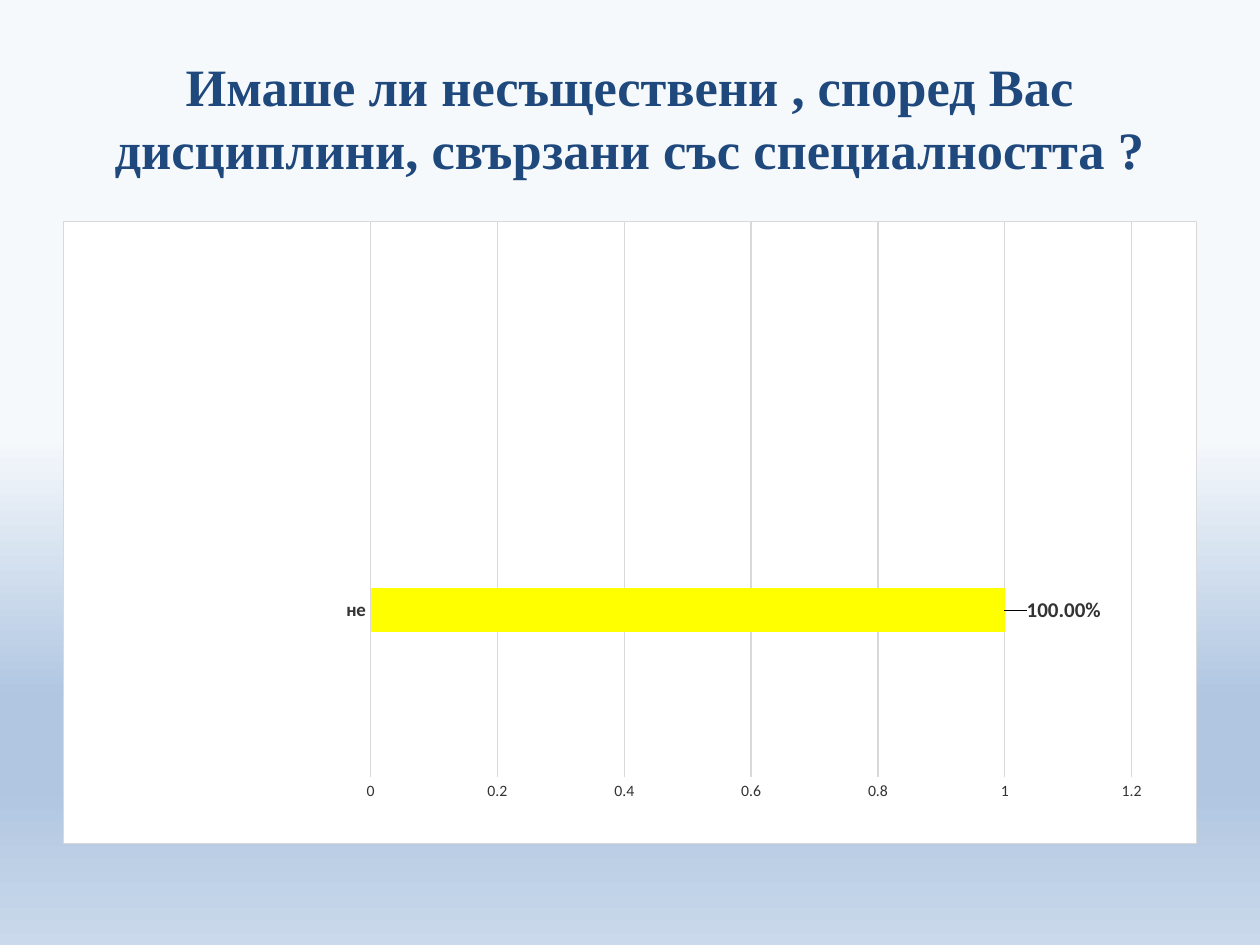
from lxml import etree
from pptx import Presentation
from pptx import util as u
from pptx.chart import data as chart_data
from pptx.dml.color import RGBColor
from pptx.enum import chart as kinds, text
from pptx.oxml import ns

NAVY = RGBColor(0x1F, 0x49, 0x7D)
DARK = RGBColor(0x33, 0x33, 0x33)
BLACK = RGBColor(0, 0, 0)
WHITE = RGBColor(0xFF, 0xFF, 0xFF)
GRID = RGBColor(0xD9, 0xD9, 0xD9)
YELLOW = RGBColor(0xFF, 0xFF, 0x00)
SKY = [(46, RGBColor(0xF6, 0xF9, 0xFC)), (74, RGBColor(0xB0, 0xC6, 0xE1)),
       (83, RGBColor(0xB0, 0xC6, 0xE1)), (100, RGBColor(0xCA, 0xD9, 0xEB))]


def set_font(font, *, name, size, color, bold=False):
    font.name, font.size, font.bold = name, u.Pt(size), bold
    font.color.rgb = color


def write(frame, words, *, align=text.PP_ALIGN.LEFT, **style):
    para = frame.paragraphs[0]
    para.alignment = align
    span = para.add_run()
    span.text = words
    set_font(span.font, **style)


def add_node(parent, tag, **attributes):
    return etree.SubElement(parent, ns.qn(tag), **attributes)


def manual_layout(**values):
    layout = etree.Element(ns.qn("c:layout"))
    manual = add_node(layout, "c:manualLayout")
    for tag, value in values.items():
        add_node(manual, f"c:{tag}", val=str(value))
    return layout


class SlideBuilder:
    heading_font = "Times New Roman"
    chart_font = "Calibri"

    def __init__(self, deck):
        self.page = deck.slides.add_slide(deck.slide_layouts[5])

    def background(self, stops):
        self.page.background.fill.gradient()
        gradient = next(self.page.element.iter(ns.qn("a:gradFill")))
        for child in list(gradient):
            gradient.remove(child)
        stop_list = add_node(gradient, "a:gsLst")
        for percent, color in stops:
            stop = add_node(stop_list, "a:gs", pos=str(percent * 1000))
            add_node(stop, "a:srgbClr", val=str(color))
        add_node(gradient, "a:lin", ang=str(90 * 60000), scaled="0")

    def title(self, words, left, top, width, height):
        box = self.page.shapes.title
        box.left, box.top, box.width, box.height = map(u.Pt, (left, top, width, height))
        box.text_frame.word_wrap = True
        box.text_frame.auto_size = text.MSO_AUTO_SIZE.NONE
        box.text_frame.vertical_anchor = text.MSO_ANCHOR.MIDDLE
        write(box.text_frame, words, align=text.PP_ALIGN.CENTER,
              name=self.heading_font, size=30, color=NAVY, bold=True)

    def axis(self, axis, size, bold):
        axis.major_tick_mark = axis.minor_tick_mark = kinds.XL_TICK_MARK.NONE
        axis.format.line.fill.background()
        set_font(axis.tick_labels.font, name=self.chart_font, size=size,
                 color=DARK, bold=bold)

    def bar_chart(self, categories, values, left, top, width, height):
        answers = chart_data.CategoryChartData(number_format="0.00%")
        answers.categories = categories
        answers.add_series("Series 1", values)
        chart = self.page.shapes.add_chart(
            kinds.XL_CHART_TYPE.BAR_CLUSTERED,
            *map(u.Pt, (left, top, width, height)), answers).chart
        chart.has_legend = chart.has_title = False
        set_font(chart.font, name=self.chart_font, size=10, color=BLACK)

        # Axes and gridlines
        self.axis(chart.category_axis, 10.8, True)
        chart.category_axis.has_major_gridlines = False
        scale = chart.value_axis
        self.axis(scale, 9, False)
        scale.minimum_scale, scale.maximum_scale, scale.major_unit = 0, 1.2, 0.2
        scale.tick_labels.number_format = "General"
        scale.tick_labels.number_format_is_linked = False
        scale.has_major_gridlines = True
        scale.major_gridlines.format.line.color.rgb = GRID
        scale.major_gridlines.format.line.width = u.Pt(0.75)

        # Bars and labels
        plot = chart.plots[0]
        plot.vary_by_categories = False
        plot.gap_width = 150
        series = plot.series[0]
        series.format.fill.solid()
        series.format.fill.fore_color.rgb = YELLOW
        labels = series.data_labels
        labels.show_value = True
        labels.number_format, labels.number_format_is_linked = "0.00%", False
        labels.position = kinds.XL_LABEL_POSITION.OUTSIDE_END
        label_style = dict(name=self.chart_font, size=12, color=DARK, bold=True)
        set_font(labels.font, **label_style)
        for index, value in enumerate(values):
            if value is not None:
                label = series.points[index].data_label
                set_font(label.font, **label_style)
                label.position = kinds.XL_LABEL_POSITION.OUTSIDE_END
        # Shift the labels a little away from the bar ends
        space = chart.element
        for node in space.iter(ns.qn("c:dLbl")):
            node.find(ns.qn("c:idx")).addnext(manual_layout(x=0.015, y=0))

        # Plot position, chart fill and border
        area = next(space.iter(ns.qn("c:plotArea")))
        for old in area.findall(ns.qn("c:layout")):
            area.remove(old)
        area.insert(0, manual_layout(layoutTarget="inner", xMode="edge", yMode="edge",
                                     x=0.271, y=0, w=0.672, h=0.893))
        look = etree.Element(ns.qn("c:spPr"))
        add_node(add_node(look, "a:solidFill"), "a:srgbClr", val=str(WHITE))
        border = add_node(look, "a:ln", w=str(u.Pt(0.75)))
        add_node(add_node(border, "a:solidFill"), "a:srgbClr", val=str(GRID))
        space.find(ns.qn("c:chart")).addnext(look)


def main():
    deck = Presentation()
    deck.slide_width, deck.slide_height = u.Pt(720), u.Pt(540)
    builder = SlideBuilder(deck)
    builder.background(SKY)
    builder.title("Имаше ли несъществени , според Вас дисциплини, "
                  "свързани със специалността ?", 36, 21.6, 648, 90)
    builder.bar_chart(["", "не", "", "", ""], [None, 1, None, None, None],
                      36, 126, 648, 356.4)
    deck.save("out.pptx")


if __name__ == "__main__":
    main()
